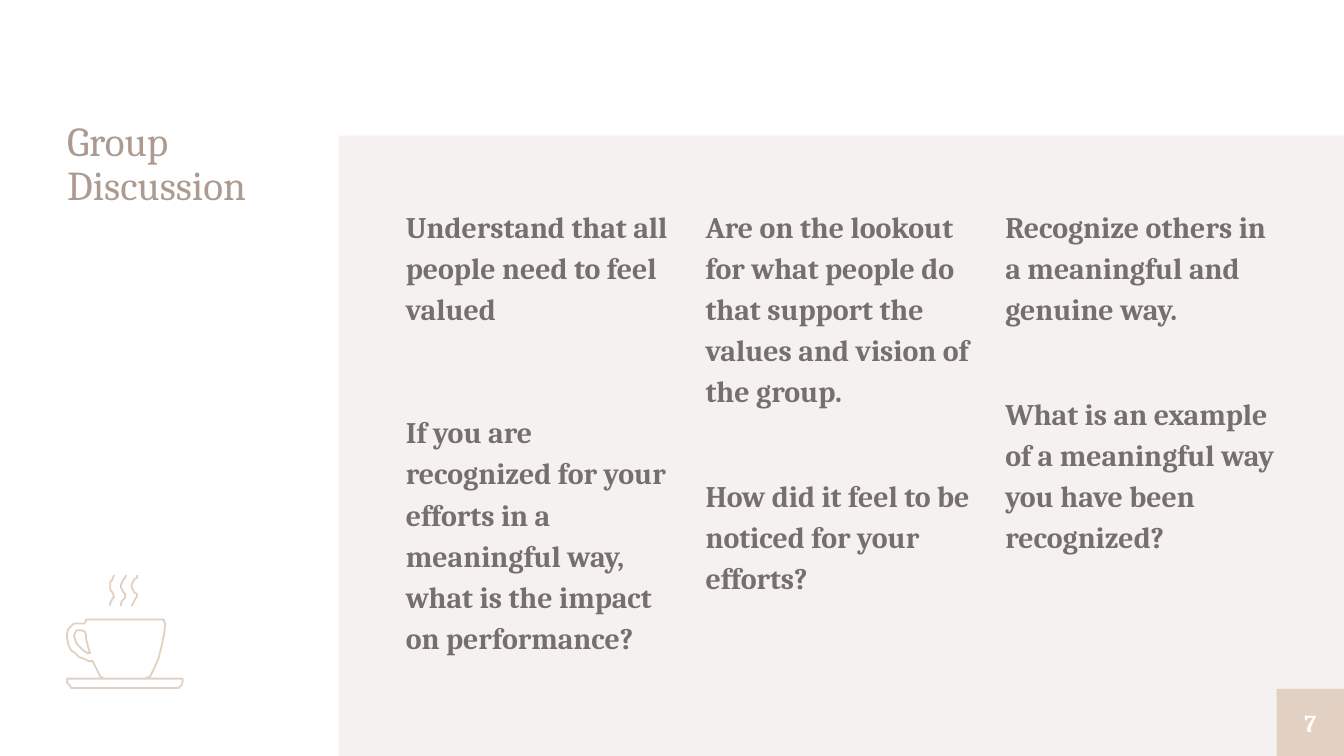
"""Builds the Group Discussion slide with three columns of prompts and a cup drawing."""
import pptx
import pptx.dml.color
import pptx.enum.text
import pptx.oxml
import pptx.util

COLORS = {"panel": "F5F1F0", "title": "AD9B91", "body": "756F6F", "accent": "E2D1C2", "white": "FFFFFF"}
FONT = "Cambria"
CELL = pptx.util.Inches(0.5)
HUNDREDTH = pptx.util.Inches(0.01)

PROMPTS = [
    ("Understand that all people need to feel valued",
     "If you are recognized for your efforts in a meaningful way, what is the impact on performance?", 44),
    ("Are on the lookout for what people do that support the values and vision of the group.",
     "How did it feel to be noticed for your efforts?", 34),
    ("Recognize others in a meaningful and genuine way.",
     "What is an example of a meaningful way you have been recognized?", 34),
]

CUP = [(109, 504), (111, 503.7), (112, 503), (115, 497), (118, 490), (120, 482), (122, 473),
       (123, 464), (122.5, 462), (121.5, 461), (120, 460.6), (66, 460.6), (64.5, 461), (63.5, 462),
       (63, 464), (61, 463.6), (58, 463.6), (55, 464.4), (53, 465.6), (51, 468), (50, 471),
       (49.7, 475), (51, 480), (53, 483.5), (56, 486.5), (59, 488.6), (62, 490.2), (66, 491.6),
       (69, 492), (72, 498), (74, 502.5), (75, 503.6), (77, 504)]
HANDLE = [(55, 473), (55.5, 471), (57, 469.4), (59, 468.8), (61, 469.2), (63, 470.2), (64, 471.5),
          (64.5, 475), (66, 483), (67, 486), (65, 485.7), (62, 483.6), (59, 481.4), (57, 479),
          (55.5, 476), (55, 473)]
SAUCER = [(131, 512.4), (55, 512.4), (53, 512), (51.5, 510.5), (50.4, 508), (49.7, 504.7),
          (136.4, 504.7), (136, 507), (134.8, 510), (133, 512)]
STEAM = [(3.6, 428), (3, 430), (2, 431.4), (0.7, 433), (0, 435), (0, 437), (0.7, 439), (2, 440.6),
         (3, 442), (3.2, 444), (2.6, 445.4), (1.2, 447), (0.2, 449), (0, 451)]


class DiscussionSlide:
    """Holds the style and the current slide, measured in half-inch cells."""

    def __init__(self, deck, layout):
        self.slide = deck.slides.add_slide(deck.slide_layouts[layout])
        self.places = {place.placeholder_format.idx: place for place in self.slide.placeholders}

    def color(self, name):
        return pptx.dml.color.RGBColor.from_string(COLORS[name])

    def box(self, cells):
        return [pptx.util.Emu(round(cell * CELL)) for cell in cells]

    def block(self, cells, fill):
        block = self.slide.shapes.add_shape(1, *self.box(cells))
        block.shadow.inherit = False
        block.fill.solid()
        block.fill.fore_color.rgb = self.color(fill)
        block.line.fill.background()
        return block

    def backdrop(self, cells, fill):
        panel = self.block(cells, fill)
        self.slide.shapes._spTree.insert(2, panel._element)

    def set_text(self, holder, lines, size, color, bold=False, spacing=1.0, gap=0, align="LEFT", anchor="TOP"):
        frame = holder.text_frame
        frame.text = "\n".join(lines)
        frame.word_wrap = True
        frame.auto_size = pptx.enum.text.MSO_AUTO_SIZE.NONE
        frame.vertical_anchor = pptx.enum.text.MSO_ANCHOR[anchor]
        frame.margin_left = frame.margin_right = frame.margin_top = frame.margin_bottom = 0
        for order, paragraph in enumerate(frame.paragraphs):
            paragraph.alignment = pptx.enum.text.PP_ALIGN[align]
            paragraph.line_spacing = spacing
            paragraph.space_before = pptx.util.Pt(gap if order else 0)
            paragraph.space_after = pptx.util.Pt(0)
            for run in paragraph.runs:
                run.font.name = FONT
                run.font.size = pptx.util.Pt(size)
                run.font.bold = bold
                run.font.color.rgb = self.color(color)

    def place(self, idx, cells):
        holder = self.places[idx]
        holder.left, holder.top, holder.width, holder.height = self.box(cells)
        return holder

    def title(self, text, cells):
        self.set_text(self.place(0, cells), [text], 22, "title", spacing=0.9)

    def prompt(self, idx, lines, gap, cells):
        holder = self.place(idx, cells)
        self.set_text(holder, lines, 16, "body", bold=True, spacing=1.15, gap=gap)
        for paragraph in holder.text_frame.paragraphs:
            properties = paragraph._p.get_or_add_pPr()
            properties.set("marL", "0")
            properties.set("indent", "0")
            properties.append(pptx.oxml.parse_xml(
                '<a:buNone xmlns:a="http://schemas.openxmlformats.org/drawingml/2006/main"/>'))

    def page_number(self, text, cells):
        self.set_text(self.block(cells, "accent"), [text], 13, "white", bold=True, align="CENTER", anchor="MIDDLE")

    def drawing(self, outlines):
        group = self.slide.shapes.add_group_shape()
        for points, closed in outlines:
            builder = group.shapes.build_freeform(*points[0], scale=float(HUNDREDTH))
            builder.add_line_segments(points[1:], close=closed)
            outline = builder.convert_to_shape()
            outline.shadow.inherit = False
            outline.fill.background()
            outline.line.color.rgb = self.color("accent")
            outline.line.width = pptx.util.Pt(0.96)

    def drop(self, idx):
        element = self.places[idx]._element
        element.getparent().remove(element)


def main():
    deck = pptx.Presentation()
    deck.slide_width = 20 * CELL
    deck.slide_height = round(11.25 * CELL)
    page = DiscussionSlide(deck, 4)
    page.backdrop((5.04, 2.02, 14.96, 9.23), "panel")
    page.title("Group Discussion", (1, 1.8, 3.56, 8.46))
    for column, (statement, question, gap) in enumerate(PROMPTS):
        page.prompt(column + 1, [statement, question], gap, (6.04 + 4.46 * column, 3.02, 4.04, 7.24))
    page.drop(4)
    page.page_number("7", (19, 10.25, 1, 1))
    steam = [([(x + left, y) for x, y in STEAM], False) for left in (81.5, 90, 98.5)]
    page.drawing([(CUP, False), (HANDLE, False), (SAUCER, True)] + steam)
    deck.save("out.pptx")


if __name__ == "__main__":
    main()
